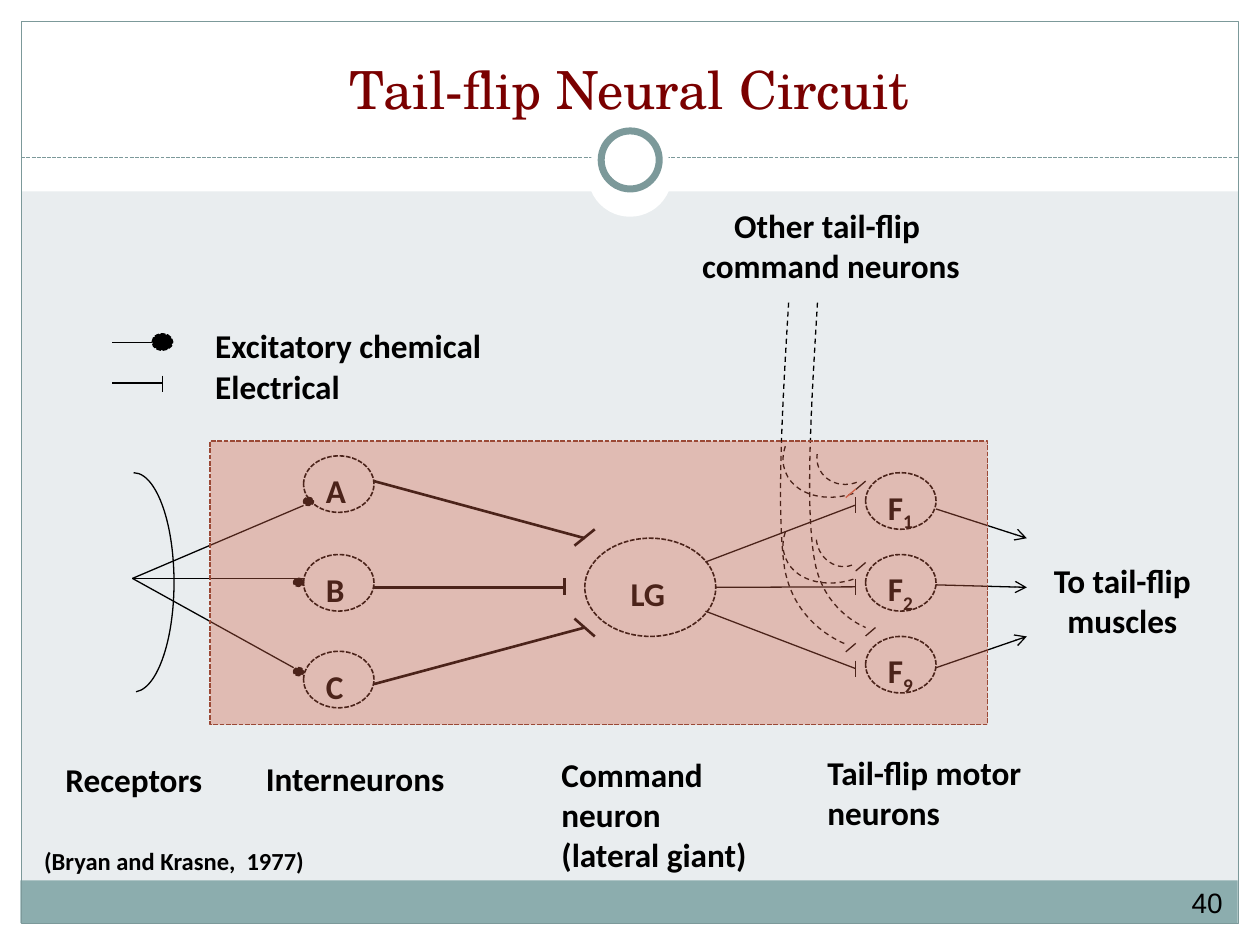
from lxml.etree import SubElement
from pptx import Presentation
from pptx.dml.color import RGBColor
from pptx.enum.dml import MSO_LINE as DASH
from pptx.enum.shapes import MSO_CONNECTOR as CONN, MSO_SHAPE as SHAPE
from pptx.enum.text import MSO_ANCHOR as ANCHOR, PP_ALIGN as ALIGN
from pptx.oxml.ns import qn
from pptx.util import Cm, Pt

BLACK = RGBColor(0x00, 0x00, 0x00)
WHITE = RGBColor(0xFF, 0xFF, 0xFF)
PALE = RGBColor(0xE9, 0xED, 0xEF)
TEAL = RGBColor(0x8C, 0xAD, 0xAE)
TEAL_DARK = RGBColor(0x7C, 0x99, 0x9A)
MAROON = RGBColor(0x7A, 0x00, 0x00)
RED = RGBColor(0xD1, 0x63, 0x49)
RED_DARK = RGBColor(0x9B, 0x49, 0x36)


class Diagram:
    """Style of the slide and a method for each kind of element."""

    label_font = {"name": "Calibri", "size": Pt(19), "bold": True}

    def __init__(self, slide):
        self.s = slide

    def style_line(self, line, color, width, dash=None):
        line.color.rgb = color
        for key, value in {"width": Pt(width), "dash_style": dash}.items():
            setattr(line, key, value)

    def shape(self, kind, box, fill=None, line=None, alpha=None):
        sp = self.s.shapes.add_shape(kind, *map(Cm, box))
        sp.shadow.inherit = False
        if fill is None:
            sp.fill.background()
        else:
            sp.fill.solid()
            sp.fill.fore_color.rgb = fill
            if alpha:
                color = sp._element.spPr.find(qn("a:solidFill")).find(qn("a:srgbClr"))
                SubElement(color, qn("a:alpha")).set("val", str(alpha * 1000))
        if line:
            self.style_line(sp.line, *line)
        else:
            sp.line.fill.background()
        return sp

    def neuron(self, x, y, w=1.42, h=1.14, fill=None):
        return self.shape(SHAPE.OVAL, (x, y, w, h), fill, (BLACK, 0.9, DASH.SQUARE_DOT))

    def arc(self, box, start, end, rotation=0, dash=None):
        sp = self.shape(SHAPE.ARC, box, line=(BLACK, 0.75, dash))
        sp.adjustments[0], sp.adjustments[1] = start, end
        sp.rotation = rotation

    def line(self, start, end, width=0.75, color=BLACK, dash=None, arrow=False):
        c = self.s.shapes.add_connector(CONN.STRAIGHT, *map(Cm, (*start, *end)))
        self.style_line(c.line, color, width, dash)
        if arrow:
            SubElement(c.line._get_or_add_ln(), qn("a:tailEnd")).set("type", "arrow")
        SubElement(c._element.spPr, qn("a:effectLst"))

    def curve(self, points, steps=16):
        """Dashed chain of cubic curves; neighbours share an end point."""
        route = [points[0]]
        for i in range(0, len(points) - 1, 3):
            for k in range(1, steps + 1):
                t = k / steps
                weights = ((1 - t) ** 3, 3 * t * (1 - t) ** 2, 3 * t * t * (1 - t), t ** 3)
                route.append([sum(w * p[axis] for w, p in zip(weights, points[i:i + 4]))
                              for axis in (0, 1)])
        route = [(Cm(x), Cm(y)) for x, y in route]
        builder = self.s.shapes.build_freeform(*route[0])
        builder.add_line_segments(route[1:], close=False)
        sp = builder.convert_to_shape()
        sp.shadow.inherit = False
        sp.fill.background()
        self.style_line(sp.line, BLACK, 0.75, DASH.DASH)

    def fill_text(self, tf, lines, align, font, color, sub=None):
        for i, text in enumerate(lines):
            p = tf.paragraphs[0] if i == 0 else tf.add_paragraph()
            p.alignment = align
            for part in filter(None, (text, sub)):
                r = p.add_run()
                r.text = part
                for key, value in font.items():
                    setattr(r.font, key, value)
                r.font.color.rgb = color
                if part is sub:
                    r._r.get_or_add_rPr().set("baseline", "-25000")

    def text(self, box, *lines, align=ALIGN.LEFT, sub=None, frame=None, **font):
        tf = self.s.shapes.add_textbox(*map(Cm, box)).text_frame
        for key, value in {"word_wrap": True, **(frame or {})}.items():
            setattr(tf, key, value)
        self.fill_text(tf, lines, align, {**self.label_font, **font}, BLACK, sub)

    def title(self, box, text, **font):
        sp = self.s.shapes.title
        for key, value in zip(("left", "top", "width", "height"), map(Cm, box)):
            setattr(sp, key, value)
        sp.text_frame.vertical_anchor = ANCHOR.BOTTOM
        self.fill_text(sp.text_frame, [text], ALIGN.CENTER, font, MAROON)
        # The title stands in front of the white margin
        self.s.shapes._spTree.append(sp._element)


def draw_frame(d):
    for box in ((0, 18.62, 25.4, 0.43), (0, 0, 25.4, 3.86),
                (0, 0, 0.43, 19.05), (24.97, 0, 0.43, 19.05)):
        d.shape(SHAPE.RECTANGLE, box, WHITE)
    d.shape(SHAPE.RECTANGLE, (0.41, 17.75, 24.54, 0.86), TEAL)
    d.shape(SHAPE.RECTANGLE, (0.43, 0.43, 24.54, 18.19), line=(TEAL_DARK, 0.75))
    d.line((0.43, 3.18), (24.97, 3.18), color=TEAL_DARK, dash=DASH.SQUARE_DOT)
    d.shape(SHAPE.OVAL, (11.85, 2.67, 1.7, 1.7), WHITE)
    d.shape(SHAPE.OVAL, (12.12, 2.64, 1.17, 1.17), WHITE, (TEAL_DARK, 4))
    d.title((0.84, 1.07, 23.7, 1.47), "Tail-flip Neural Circuit",
            name="TeX Gyre Schola", size=Pt(30))
    inset = dict.fromkeys(("margin_left", "margin_right", "margin_top", "margin_bottom"), Cm(0.13))
    d.text((23.7, 17.58, 1.27, 1.22), "40", align=ALIGN.CENTER, name="Arial", size=Pt(16),
           bold=False, frame={**inset, "vertical_anchor": ANCHOR.MIDDLE})


def draw_legend(d):
    d.line((2.26, 6.91), (3.07, 6.91))
    d.neuron(3.07, 6.73, 0.41, 0.33, BLACK)
    d.line((2.26, 7.72), (3.28, 7.72), 1.5)
    d.line((3.28, 7.57), (3.28, 7.9))
    d.text((4.09, 6.43, 9.32, 1.07), "Excitatory chemical")
    d.text((4.09, 7.26, 9.32, 0.84), "Electrical")


def draw_circuit(d):
    # Receptors and their chemical synapses
    d.arc((1.88, 9.53, 1.63, 4.42), 162, 53.23)
    for end, dot_y in (((6.12, 10.19), 10.03), ((6.12, 11.66), 11.66), ((5.92, 13.46), 13.46)):
        d.line((2.67, 11.66), end)
        d.neuron(6.12 if dot_y < 11 else 5.92, dot_y, 0.2, 0.16, BLACK)

    # Interneurons
    for name, y in (("A", 9.19), ("B", 11.18), ("C", 13.13)):
        d.neuron(6.12, y)
        d.text((6.32, y + 0.17, 1.22, 0.84), name)

    # Electrical synapses onto the command neuron
    for start, end, bar in (
            ((7.54, 9.7), (11.79, 10.85), ((11.99, 10.67), (11.58, 11))),
            ((7.54, 11.84), (11.38, 11.84), ((11.38, 11.66), (11.38, 11.99))),
            ((7.54, 13.79), (11.79, 12.65), ((11.58, 12.47), (11.99, 12.83)))):
        d.line(start, end, 1.5)
        d.line(*bar, 1.5)
    d.neuron(11.79, 10.85, 2.64, 1.98)
    d.text((11.94, 11.43, 2.24, 0.84), "LG", align=ALIGN.CENTER)

    # Motor neurons with their input and output
    for i, (sub, start, out_y, muscle_y) in enumerate((
            ("1", (14.22, 11.33), 10.26, 10.85),
            ("2", (14.43, 11.84), 11.79, 11.84),
            ("9", (14.22, 12.32), 13.46, 12.83))):
        y = 9.53 + 1.65 * i
        bar_y = y + 0.65
        d.line(start, (17.25, bar_y))
        d.line((17.25, bar_y - 0.16), (17.25, bar_y + 0.16))
        d.neuron(17.45, y)
        d.text((17.65, y + 0.16, 1.22, 0.84), "F", sub=sub)
        d.line((18.87, out_y), (20.7, muscle_y), arrow=True)

    # Input from the other command neurons
    d.curve([(15.9, 6.1), (15.77, 8.2), (15.65, 10.34), (15.82, 11.48),
             (16.03, 12.62), (17.04, 12.98), (17.04, 12.98)])
    d.curve([(16.48, 6.1), (16.36, 8.1), (16.23, 10.13), (16.41, 11.23),
             (16.56, 12.32), (17.45, 12.65), (17.45, 12.65)])
    for box, start in (((16.46, 8.64, 1.22, 1.12), 162), ((16.46, 10.29, 1.02, 1.14), 162),
                       ((15.75, 8.18, 2.41, 1.8), 164.93), ((15.75, 9.91, 2.41, 1.8), 164.93)):
        d.arc(box, start, 15.11, 159.2, DASH.DASH)
    for x, y, color in ((17.45, 9.7, BLACK), (17.25, 9.86, RED), (17.45, 11.34, BLACK),
                        (17.65, 12.65, BLACK), (17.25, 12.97, BLACK)):
        d.line((x, y), (x - 0.2, y + 0.17), color=color)


def draw_labels(d):
    d.text((13.13, 4.01, 7.24, 1.88), "Other tail-flip ", "command neurons", align=ALIGN.CENTER)
    d.text((20.9, 11.18, 3.45, 1.45), "To tail-flip muscles", align=ALIGN.CENTER)
    d.text((1.07, 15.19, 3.45, 0.84), "Receptors")
    d.text((5.11, 15.16, 4.45, 0.91), "Interneurons")
    d.text((11.07, 15.09, 4.57, 2.31), "Command neuron (lateral giant)")
    d.text((16.43, 15.04, 4.45, 1.45), "Tail-flip motor neurons")
    d.text((0.64, 16.94, 7.62, 0.86), "(Bryan and Krasne,  1977)", size=Pt(14))


def main():
    prs = Presentation()
    prs.slide_width, prs.slide_height = Cm(25.4), Cm(19.05)
    s = prs.slides.add_slide(prs.slide_layouts[5])
    s.background.fill.solid()
    s.background.fill.fore_color.rgb = PALE
    d = Diagram(s)
    draw_frame(d)
    draw_legend(d)
    draw_circuit(d)
    draw_labels(d)
    # Translucent panel over the circuit
    d.shape(SHAPE.RECTANGLE, (4.24, 8.89, 15.67, 5.72), RED,
            (RED_DARK, 0.9, DASH.SQUARE_DOT), alpha=36)
    prs.save("out.pptx")


if __name__ == "__main__":
    main()
